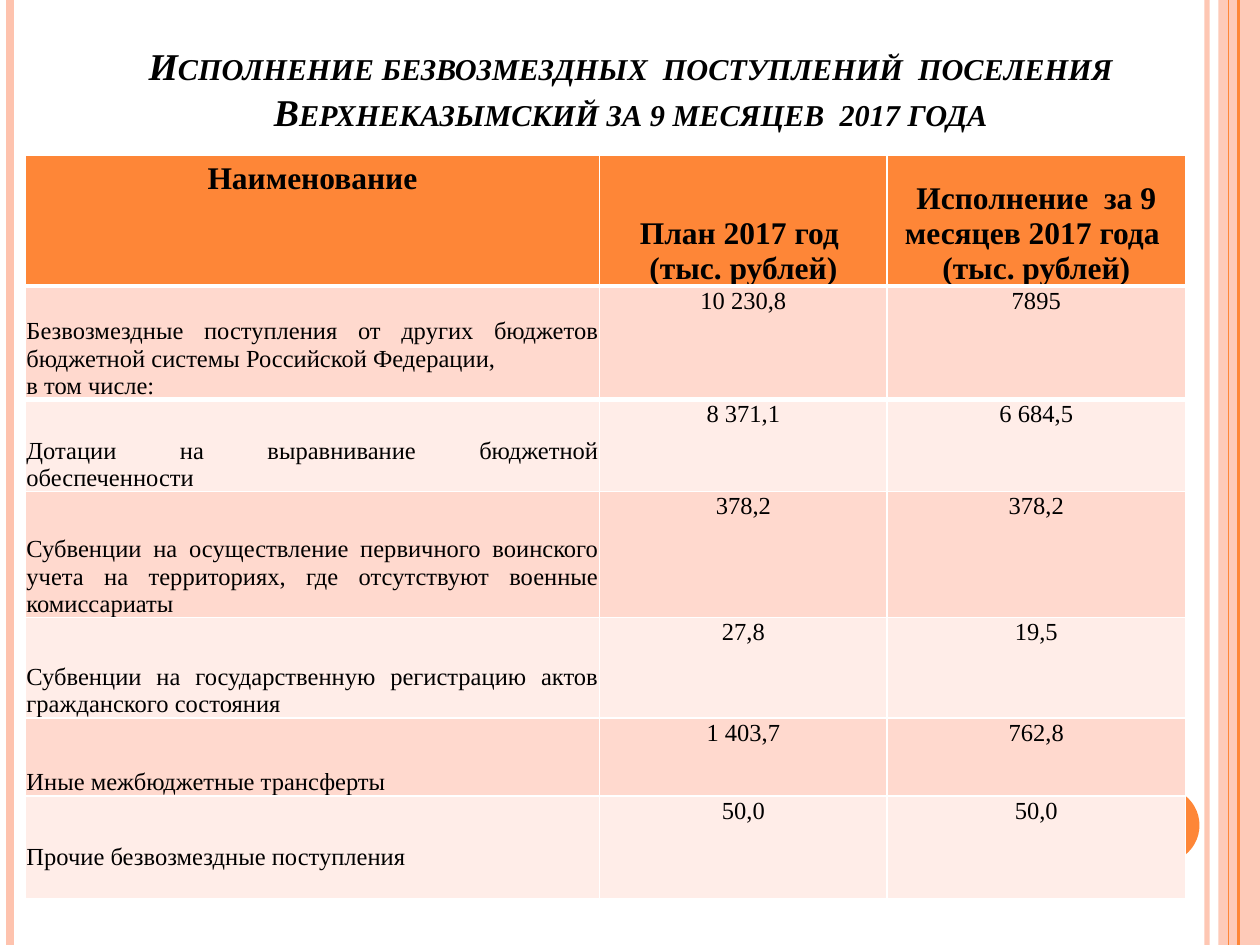
from lxml import etree
from pptx import Presentation
from pptx import util as u
from pptx.dml.color import RGBColor
from pptx.enum import shapes, text
from pptx.oxml.ns import qn

FONT = "Times New Roman"
ORANGE, PEACH = "FE8637", "FEC3AE"
BANDS = ["FFD9CE", "FFEDE8"]
COLUMNS = [4.56, 2.28, 2.37]
ROWS = [1.04, 0.9, 0.73, 1, 0.8, 0.62, 0.81]
HEADER = ["Наименование", "План 2017 год \n(тыс. рублей)",
          "Исполнение  за 9 месяцев 2017 года \n(тыс. рублей)"]
INCOME = [
    ("Безвозмездные поступления от других бюджетов бюджетной системы "
     "Российской Федерации,\nв том числе:", "10 230,8", "7895"),
    ("Дотации на выравнивание бюджетной обеспеченности", "8 371,1", "6 684,5"),
    ("Субвенции на осуществление первичного воинского учета на территориях, "
     "где отсутствуют военные комиссариаты", "378,2", "378,2"),
    ("Субвенции на государственную регистрацию актов гражданского состояния",
     "27,8", "19,5"),
    ("Иные межбюджетные трансферты", "1 403,7", "762,8"),
    ("Прочие безвозмездные поступления", "50,0", "50,0"),
]


def rgb(value):
    return RGBColor.from_string(value)


def set_alpha(fill, percent):
    color = fill._xPr.find(qn("a:solidFill"))[0]
    etree.SubElement(color, qn("a:alpha"), val=str(percent * 1000))


def format_paragraph(p, size, align, bold=False, italic=False):
    p.alignment = align
    p.font.name, p.font.size = FONT, u.Pt(size)
    p.font.bold, p.font.italic = bold, italic
    p.font.color.rgb = rgb("000000")


def add_rule(s, x, height, color, weight, opacity=100):
    line = s.shapes.add_connector(shapes.MSO_CONNECTOR.STRAIGHT,
                                  u.Inches(x), 0, u.Inches(x), height)
    line.line.color.rgb = rgb(color)
    line.line.width = u.Pt(weight)
    if opacity < 100:
        set_alpha(line.line.fill, opacity)
    etree.SubElement(line._element.spPr, qn("a:effectLst"))


def add_solid(s, kind, box, color, opacity=100):
    sp = s.shapes.add_shape(kind, *box)
    sp.shadow.inherit = False
    sp.fill.solid()
    sp.fill.fore_color.rgb = rgb(color)
    sp.line.fill.background()
    if opacity < 100:
        set_alpha(sp.fill, opacity)


def add_frame(s, width, height):
    add_rule(s, 9.58, height, PEACH, 3, 93)
    add_rule(s, 0.08, height, PEACH, 4.5)
    band = u.Inches(0.33)
    add_solid(s, shapes.MSO_SHAPE.RECTANGLE, (width - band, 0, band, height), PEACH, 87)
    add_rule(s, 9.83, height, ORANGE, 1.5)
    add_rule(s, 9.75, height, ORANGE, 0.75)
    add_solid(s, shapes.MSO_SHAPE.OVAL,
              [u.Inches(v) for v in (8.92, 6.25, 0.6, 0.6)], ORANGE)


def add_title(s, box):
    title = s.shapes.title
    title.left, title.top, title.width, title.height = box
    tf = title.text_frame
    tf.text = ("Исполнение безвозмездных  поступлений  поселения "
               "Верхнеказымский за 9 месяцев  2017 года")
    tf.word_wrap = True
    tf.auto_size = text.MSO_AUTO_SIZE.NONE
    tf.vertical_anchor = text.MSO_ANCHOR.BOTTOM
    tf.margin_bottom = u.Inches(0.41)
    p = tf.paragraphs[0]
    format_paragraph(p, 21.6, text.PP_ALIGN.CENTER, True, True)
    p.runs[0].font._element.set("cap", "small")


def add_border(cell, side, weight):
    tcPr = cell._tc.get_or_add_tcPr()
    line = etree.Element(qn(f"a:{side}"), w=str(u.Pt(weight)))
    fill = etree.SubElement(line, qn("a:solidFill"))
    etree.SubElement(fill, qn("a:srgbClr"), val="FFFFFF")
    tcPr.insert(0, line)


def fill_cell(cell, words, color, size, align, anchor, bold=False):
    cell.text = words
    cell.fill.solid()
    cell.fill.fore_color.rgb = rgb(color)
    cell.vertical_anchor = anchor
    for p in cell.text_frame.paragraphs:
        format_paragraph(p, size, align, bold)


def set_margins(cell, bottom=0):
    cell.margin_left = cell.margin_right = cell.margin_top = u.Inches(0.01)
    cell.margin_bottom = u.Inches(bottom)


def add_income_table(s, box):
    left, top, width, height = box
    table = s.shapes.add_table(len(ROWS), len(COLUMNS), *box).table
    table.first_row = table.horz_banding = False
    for column, share in zip(table.columns, COLUMNS):
        column.width = int(width * share / sum(COLUMNS))
    for row, share in zip(table.rows, ROWS):
        row.height = int(height * share / sum(ROWS))
    center, justify = text.PP_ALIGN.CENTER, text.PP_ALIGN.JUSTIFY
    upper, lower = text.MSO_ANCHOR.TOP, text.MSO_ANCHOR.BOTTOM
    for c, words in enumerate(HEADER):
        cell = table.cell(0, c)
        fill_cell(cell, words, ORANGE, 18, center, lower if c else upper, True)
        if c:
            set_margins(cell)
        add_border(cell, "lnB", 3)
        add_border(table.cell(1, c), "lnT", 3)
    for r, record in enumerate(INCOME, 1):
        for c, words in enumerate(record):
            cell = table.cell(r, c)
            align, anchor = (center, upper) if c else (justify, lower)
            fill_cell(cell, words, BANDS[(r - 1) % 2], 14, align, anchor)
            set_margins(cell, 0.22 if r == len(INCOME) and c == 0 else 0)


def main():
    prs = Presentation()
    prs.slide_width, prs.slide_height = u.Inches(10), u.Inches(7.5)
    s = prs.slides.add_slide(prs.slide_layouts[5])
    add_frame(s, prs.slide_width, prs.slide_height)
    add_title(s, [u.Inches(v) for v in (0.28, 0.29, 9.45, 1.18)])
    add_income_table(s, [u.Inches(v) for v in (0.2, 1.23, 9.21, 5.9)])
    prs.save("out.pptx")


if __name__ == "__main__":
    main()
